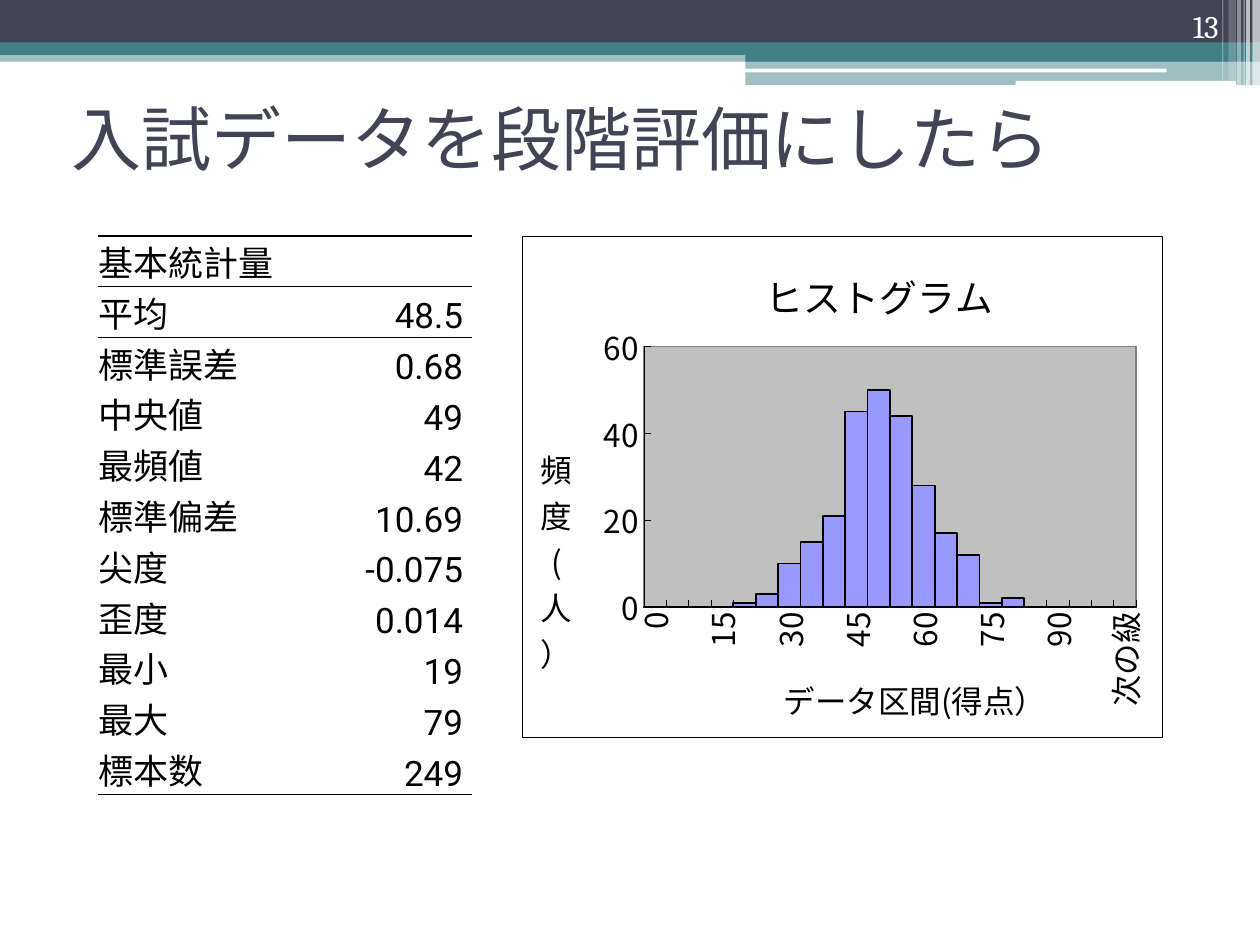
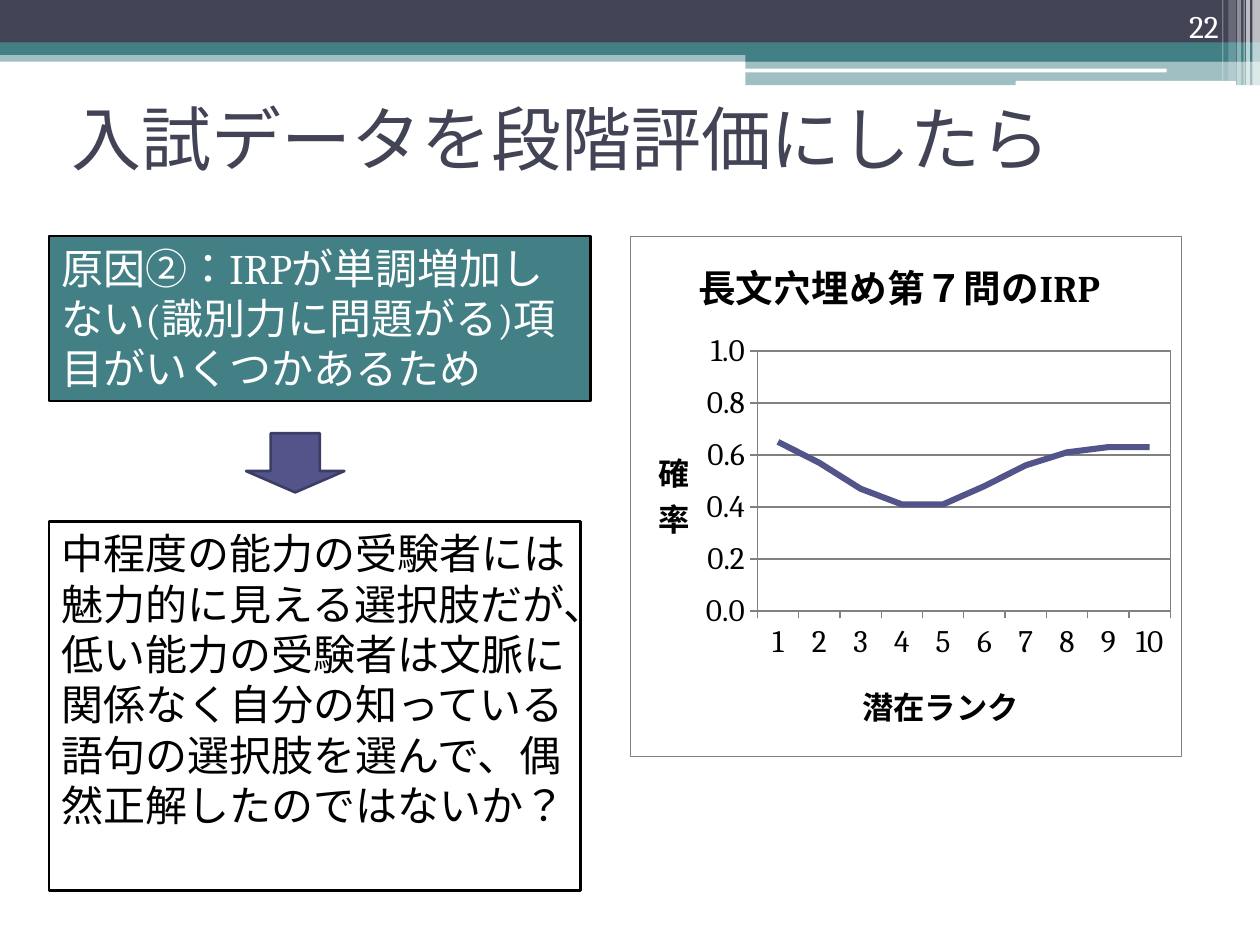
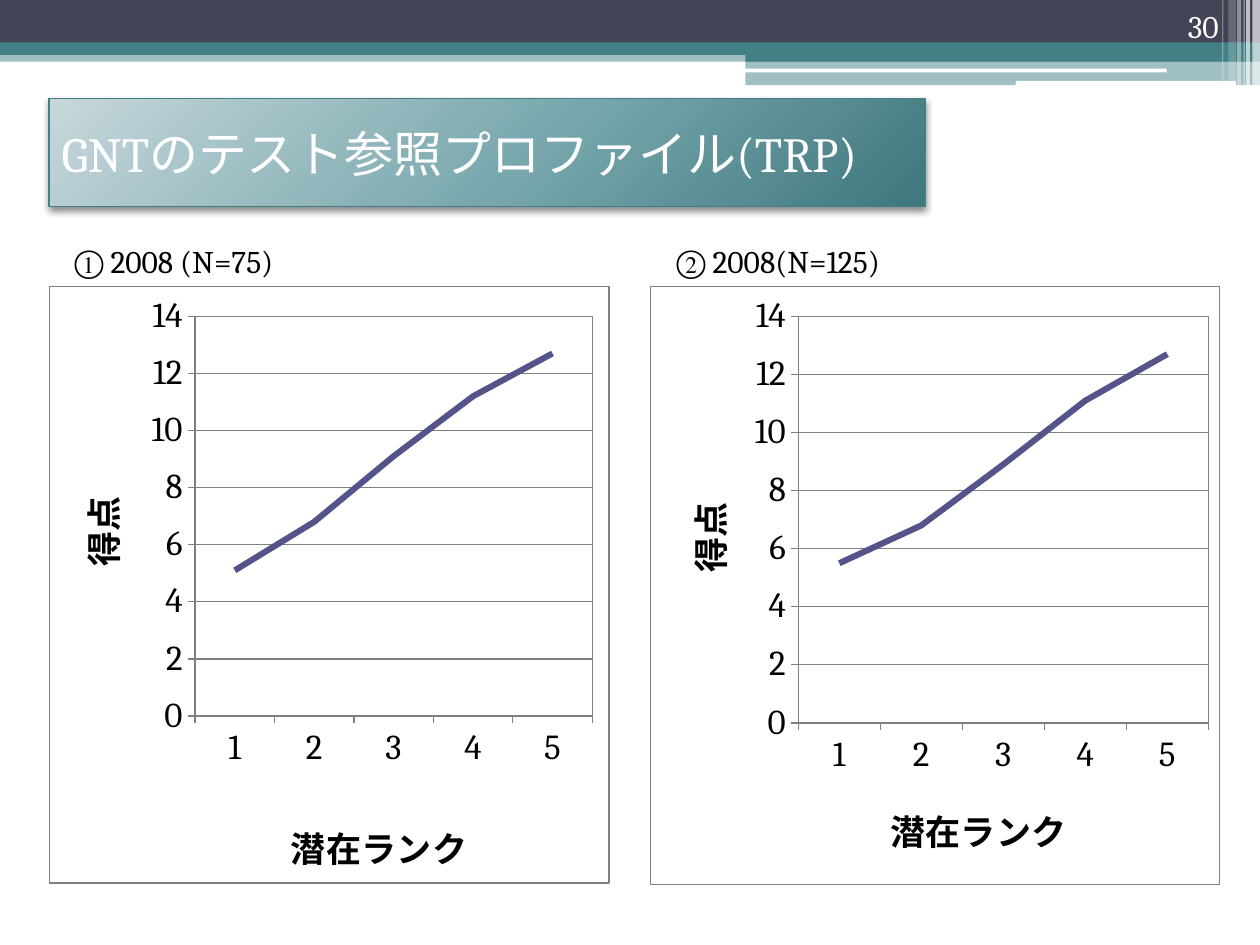
from dataclasses import dataclass
from typing import NamedTuple, Optional

from pptx import Presentation
from pptx.chart.data import CategoryChartData
from pptx.dml.color import RGBColor
from pptx.enum.chart import XL_CHART_TYPE as ChartType, XL_TICK_MARK as Tick
from pptx.enum.lang import MSO_LANGUAGE_ID as Language
from pptx.enum.shapes import MSO_SHAPE as Preset
from pptx.enum.text import MSO_ANCHOR as Anchor, MSO_AUTO_SIZE as AutoSize, PP_ALIGN as Align
from pptx.oxml import parse_xml
from pptx.oxml.ns import nsdecls, qn
from pptx.util import Pt

NAVY, TEAL, INDIGO = "424456", "438086", "53548A"
WHITE, BLACK, GRAY = "FFFFFF", "000000", "808080"
SERIF, SANS, GOTHIC = "Cambria", "Roboto", "Noto Sans CJK JP"
NO_TABLE_STYLE = "{2D5ABB26-0587-4C30-8999-92F81FD0307C}"


class Box(NamedTuple):
    left: float
    top: float
    width: float
    height: float

    def lengths(self):
        return [Pt(length) for length in self]


class Band(NamedTuple):
    box: Box
    color: str
    opacity: int = 100
    preset: Preset = Preset.RECTANGLE


class Label(NamedTuple):
    """A chart or axis title; x and y are fractions of the chart's size."""
    text: str
    x: float
    y: float
    size: float
    bold: bool = True
    stacked: bool = False


class Scale(NamedTuple):
    top: float
    step: float
    number_format: str = "0"


@dataclass
class Graph:
    box: Box
    categories: list
    values: list
    plot: tuple
    category_label: Label
    value_label: Label
    scale: Scale
    font_size: float
    title: Optional[Label] = None
    font_name: str = SERIF
    histogram: bool = False


BANDS = [
    Band(Box(0, 28.8, 720, 6.5), TEAL, 50),
    Band(Box(0, 0, 720, 24.5), NAVY),
    Band(Box(0, 24.2, 720, 7.2), TEAL),
    Band(Box(425.9, 28.1, 294.1, 7.2), TEAL),
    Band(Box(425.9, 34.6, 294.1, 14.1), TEAL, 50),
    Band(Box(425.5, 39.2, 241.2, 2.2), WHITE, preset=Preset.ROUNDED_RECTANGLE),
    Band(Box(580.3, 46.3, 126, 2.9), WHITE, preset=Preset.ROUNDED_RECTANGLE),
    *[Band(Box(left, 0, width, height), WHITE, opacity)
      for left, width, height, opacity in [
          (715.7, 4.3, 49, 65), (712.1, 2.2, 49, 65), (710.6, 0.7, 49, 60),
          (707, 2.2, 49, 40), (702, 4.3, 46.1, 20), (698.4, 0.7, 46.1, 30)]],
]

STATISTICS = [
    ("基本統計量", ""), ("平均", "48.5 "), ("標準誤差", "0.68 "), ("中央値", "49 "),
    ("最頻値", "42 "), ("標準偏差", "10.69 "), ("尖度", "-0.075 "), ("歪度", "0.014 "),
    ("最小", "19 "), ("最大", "79 "), ("標本数", "249 "),
]

HISTOGRAM = Graph(
    Box(298.4, 134.8, 365.6, 286.8),
    [*map(str, range(0, 101, 5)), "次の級"],
    [0, 0, 0, 0, 1, 3, 10, 15, 21, 45, 50, 44, 28, 17, 12, 1, 2, 0, 0, 0, 0, 0],
    (0.19, 0.22, 0.77, 0.52),
    Label("データ区間(得点）", 0.4, 0.86, 18, bold=False),
    Label("頻度(人）", 0.02, 0.4, 18, bold=False, stacked=True),
    Scale(60, 20), 18,
    title=Label("ヒストグラム", 0.37, 0.04, 21.6, bold=False),
    font_name=GOTHIC, histogram=True)

ITEM_PROFILE = Graph(
    Box(360, 134.8, 315.4, 298),
    [str(rank) for rank in range(1, 11)],
    [0.65, 0.57, 0.47, 0.41, 0.41, 0.48, 0.56, 0.61, 0.63, 0.63],
    (0.23, 0.22, 0.75, 0.5),
    Label("潜在ランク", 0.41, 0.84, 18),
    Label("確率", 0.04, 0.39, 18, stacked=True),
    Scale(1, 0.2, "0.0"), 18,
    title=Label("長文穴埋め第７問のIRP", 0.11, 0.02, 21.6))

RANKS = ["1", "2", "3", "4", "5"]
TEST_PROFILES = [
    Graph(Box(28, 163.4, 320.4, 341.6), RANKS, [5.1, 6.8, 9.1, 11.2, 12.7],
          (0.26, 0.05, 0.71, 0.67), Label("潜在ランク", 0.42, 0.88, 20),
          Label("得点", 0.03, 0.34, 20), Scale(14, 2), 20),
    Graph(Box(371.2, 163.4, 326.2, 342.4), RANKS, [5.5, 6.8, 8.9, 11.1, 12.7],
          (0.26, 0.05, 0.72, 0.68), Label("潜在ランク", 0.41, 0.85, 20),
          Label("得点", 0.04, 0.35, 20), Scale(14, 2), 20),
]
PROFILE_CAPTIONS = [("① 2008 (N=75)", 142.6), ("② 2008(N=125)", 146.9)]


def rgb(color: str) -> RGBColor:
    return RGBColor.from_string(color)


def set_font(font, size: float, name: str, color: str, bold=None) -> None:
    font.size, font.name, font.bold = Pt(size), name, bold
    font.color.rgb = rgb(color)


def set_line(line, color: str, width: float) -> None:
    line.color.rgb = rgb(color)
    line.width = Pt(width)


def write(frame, text: str, size: float, name: str, color: str,
          align=Align.LEFT, anchor=Anchor.TOP) -> None:
    frame.text = text
    frame.vertical_anchor = anchor
    para = frame.paragraphs[0]
    para.alignment = align
    set_font(para.font, size, name, color)
    para.runs[0].font.language_id = Language.JAPANESE


def add_filled(page, preset, box: Box, color: str):
    shape = page.shapes.add_shape(preset, *box.lengths())
    shape.shadow.inherit = False
    shape.fill.solid()
    shape.fill.fore_color.rgb = rgb(color)
    shape.line.fill.background()
    return shape


def add_bands_to_master(deck, page) -> None:
    """Draw the bands on a page, then move them behind the master's placeholders."""
    tree = deck.slide_master.shapes.element
    for index, band in enumerate(BANDS):
        shape = add_filled(page, band.preset, band.box, band.color)
        if band.opacity < 100:
            color = shape.element.xpath(".//a:solidFill/a:srgbClr")[0]
            color.append(parse_xml(f'<a:alpha {nsdecls("a")} val="{band.opacity * 1000}"/>'))
        tree.insert(2 + index, shape.element)


def add_page(deck, number: int):
    page = deck.slides.add_slide(deck.slide_layouts.get_by_name("Title Only"))
    corner = page.shapes.add_textbox(*Box(643.7, 0.3, 59.8, 28.8).lengths())
    corner.text_frame.word_wrap = True
    write(corner.text_frame, str(number), 18, SERIF, WHITE, Align.RIGHT, Anchor.BOTTOM)
    return page


def set_title(page, text: str, box=Box(33.8, 50.4, 648, 56.2),
              size=40, name=SANS, color=NAVY):
    title = page.shapes.title
    title.left, title.top, title.width, title.height = box.lengths()
    write(title.text_frame, text, size, name, color, anchor=Anchor.MIDDLE)
    title.text_frame.auto_size = AutoSize.NONE
    return title


def add_title_panel(title) -> None:
    """Give a title a radial gradient, a thin border and a soft shadow."""
    stops = "".join(
        f'<a:gs pos="{place * 1000}"><a:srgbClr val="{color}"/></a:gs>'
        for place, color in [(0, "C7D7DA"), (55, "77A7AD"), (100, "3E777D")])
    properties = title.element.spPr
    properties.append(parse_xml(
        f'<a:gradFill {nsdecls("a")} rotWithShape="1"><a:gsLst>{stops}</a:gsLst>'
        '<a:path path="circle"><a:fillToRect l="-40000" t="-90000" r="140000" b="190000"/>'
        '</a:path></a:gradFill>'))
    set_line(title.line, TEAL, 0.75)
    properties.append(parse_xml(
        f'<a:effectLst {nsdecls("a")}><a:outerShdw blurRad="{Pt(4)}" dist="{Pt(2)}" '
        'dir="5400000" rotWithShape="0"><a:srgbClr val="000000"><a:alpha val="45000"/>'
        '</a:srgbClr></a:outerShdw></a:effectLst>'))


def add_note(page, box: Box, text: str, fill: str, color: str) -> None:
    note = add_filled(page, Preset.RECTANGLE, box, fill)
    set_line(note.line, BLACK, 1.5)
    write(note.text_frame, text, 24, SERIF, color)
    note.text_frame.auto_size = AutoSize.SHAPE_TO_FIT_TEXT


def add_statistics(page) -> None:
    last = len(STATISTICS) - 1
    rules = {0: {"lnT": 1, "lnB": 0.5}, 1: {"lnT": 0.5}, last: {"lnB": 1}}
    frame = page.shapes.add_table(len(STATISTICS), 2, *Box(56.2, 134.8, 213.4, 319.6).lengths())
    frame.element.xpath(".//a:tableStyleId")[0].text = NO_TABLE_STYLE
    table = frame.table
    table.first_row = table.horz_banding = False
    for column, width in zip(table.columns, (147.8, 65.6)):
        column.width = Pt(width)
    for row, texts in enumerate(STATISTICS):
        for column, text in enumerate(texts):
            cell = table.cell(row, column)
            cell.margin_left = cell.margin_top = cell.margin_right = cell.margin_bottom = 0
            cell.vertical_anchor = Anchor.BOTTOM
            para = cell.text_frame.paragraphs[0]
            para.text = text
            para.alignment = Align.RIGHT if column else Align.LEFT
            set_font(para.font, 20, SANS if row else GOTHIC, BLACK)
            for side, width in rules.get(row, {}).items():
                cell._tc.get_or_add_tcPr().append(parse_xml(
                    f'<a:{side} {nsdecls("a")} w="{Pt(width)}"><a:solidFill>'
                    f'<a:srgbClr val="{BLACK}"/></a:solidFill></a:{side}>'))
            cell.fill.background()


def set_layout(parent, index: int, x: float, y: float, size: tuple = ()) -> None:
    """Fix the place of a chart part, and the inner size of a plot area."""
    for old in parent.findall(qn("c:layout")):
        parent.remove(old)
    parts = [("layoutTarget", "inner")] if size else []
    parts += [("xMode", "edge"), ("yMode", "edge"), ("x", x), ("y", y), *zip("wh", size)]
    inside = "".join(f'<c:{tag} val="{value}"/>' for tag, value in parts)
    parent.insert(index, parse_xml(
        f'<c:layout {nsdecls("c")}><c:manualLayout>{inside}</c:manualLayout></c:layout>'))


def write_label(title, label: Label, font_name: str) -> None:
    para = title.text_frame.paragraphs[0]
    para.text = label.text
    set_font(para.font, label.size, font_name, BLACK, label.bold)
    set_layout(title.element, 1, label.x, label.y)
    if label.stacked:
        body = title.element.xpath(".//a:bodyPr")[0]
        body.set("rot", "0")
        body.set("vert", "wordArtVert")


def area_format(fill: Optional[str], line: str, width: float):
    paint = f'<a:solidFill><a:srgbClr val="{fill}"/></a:solidFill>' if fill else "<a:noFill/>"
    return parse_xml(
        f'<c:spPr {nsdecls("c", "a")}>{paint}<a:ln w="{Pt(width)}"><a:solidFill>'
        f'<a:srgbClr val="{line}"/></a:solidFill></a:ln></c:spPr>')


def turn_category_labels(chart, every: int) -> None:
    """Set the category labels upright and show only some of them."""
    axis = chart.element.xpath(".//c:catAx")[0]
    body = axis.xpath("./c:txPr/a:bodyPr")[0]
    body.set("rot", "-5400000")
    body.set("vert", "horz")
    axis.find(qn("c:lblOffset")).addnext(
        parse_xml(f'<c:tickLblSkip {nsdecls("c")} val="{every}"/>'))


def add_graph(page, graph: Graph) -> None:
    data = CategoryChartData()
    data.categories = graph.categories
    data.add_series("Series 1", graph.values)
    kind = ChartType.COLUMN_CLUSTERED if graph.histogram else ChartType.LINE
    chart = page.shapes.add_chart(kind, *graph.box.lengths(), data).chart
    chart.has_legend = False
    set_font(chart.font, graph.font_size, graph.font_name, BLACK)
    chart.has_title = graph.title is not None
    if graph.title:
        write_label(chart.chart_title, graph.title, graph.font_name)

    ink, width = (BLACK, 0.25) if graph.histogram else (GRAY, 0.75)
    for axis, label in ((chart.category_axis, graph.category_label),
                        (chart.value_axis, graph.value_label)):
        axis.major_tick_mark = Tick.INSIDE if graph.histogram else Tick.OUTSIDE
        axis.minor_tick_mark = Tick.NONE
        set_line(axis.format.line, ink, width)
        set_font(axis.tick_labels.font, graph.font_size, graph.font_name, BLACK)
        write_label(axis.axis_title, label, graph.font_name)
    scale, axis = graph.scale, chart.value_axis
    axis.minimum_scale, axis.maximum_scale, axis.major_unit = 0, scale.top, scale.step
    axis.tick_labels.number_format = scale.number_format
    axis.tick_labels.number_format_is_linked = False
    axis.has_major_gridlines = not graph.histogram

    plot = chart.plots[0]
    plot.vary_by_categories = False
    series = plot.series[0]
    if graph.histogram:
        plot.gap_width = 0
        series.format.fill.solid()
        series.format.fill.fore_color.rgb = rgb("9999FF")
        set_line(series.format.line, BLACK, 1)
        turn_category_labels(chart, 3)
    else:
        series.smooth = False
        set_line(series.format.line, INDIGO, 3.5)
        set_line(axis.major_gridlines.format.line, GRAY, 0.75)

    area = chart.element.xpath(".//c:plotArea")[0]
    set_layout(area, 0, *graph.plot[:2], graph.plot[2:])
    area.append(area_format("C0C0C0" if graph.histogram else None, GRAY, 0.75))
    chart.element.find(qn("c:chart")).addnext(area_format(WHITE, ink, width))


def build_statistics_page(page) -> None:
    set_title(page, "入試データを段階評価にしたら")
    add_statistics(page)
    add_graph(page, HISTOGRAM)


def build_cause_page(page) -> None:
    set_title(page, "入試データを段階評価にしたら")
    add_graph(page, ITEM_PROFILE)
    add_note(page, Box(28, 134.8, 309.6, 94.4),
             "原因②：IRPが単調増加しない(識別力に問題がる)項目がいくつかあるため", TEAL, WHITE)
    arrow = add_filled(page, Preset.DOWN_ARROW, Box(140.6, 247.6, 56.2, 33.8), INDIGO)
    arrow.adjustments[0], arrow.adjustments[1] = 0.5, 0.36
    set_line(arrow.line, "3D3E66", 1.5)
    add_note(page, Box(28, 298, 303.8, 211),
             "中程度の能力の受験者には魅力的に見える選択肢だが、低い能力の受験者は文脈に"
             "関係なく自分の知っている語句の選択肢を選んで、偶然正解したのではないか？",
             WHITE, BLACK)


def build_profile_page(page) -> None:
    add_title_panel(set_title(page, "GNTのテスト参照プロファイル(TRP)",
                              Box(28, 56.2, 500.6, 61.9), 28, SERIF, WHITE))
    for graph, (text, width) in zip(TEST_PROFILES, PROFILE_CAPTIONS):
        add_graph(page, graph)
        caption = page.shapes.add_textbox(*Box(graph.box.left, 134.8, width, 28.8).lengths())
        caption.text_frame.word_wrap = False
        caption.text_frame.auto_size = AutoSize.SHAPE_TO_FIT_TEXT
        write(caption.text_frame, text, 18, SERIF, BLACK, Align.CENTER)


def main() -> None:
    deck = Presentation()
    deck.slide_width, deck.slide_height = Pt(720), Pt(540)
    builders = {13: build_statistics_page, 22: build_cause_page, 30: build_profile_page}
    for number, build in builders.items():
        build(add_page(deck, number))
    add_bands_to_master(deck, deck.slides[0])
    deck.save("out.pptx")


if __name__ == "__main__":
    main()
